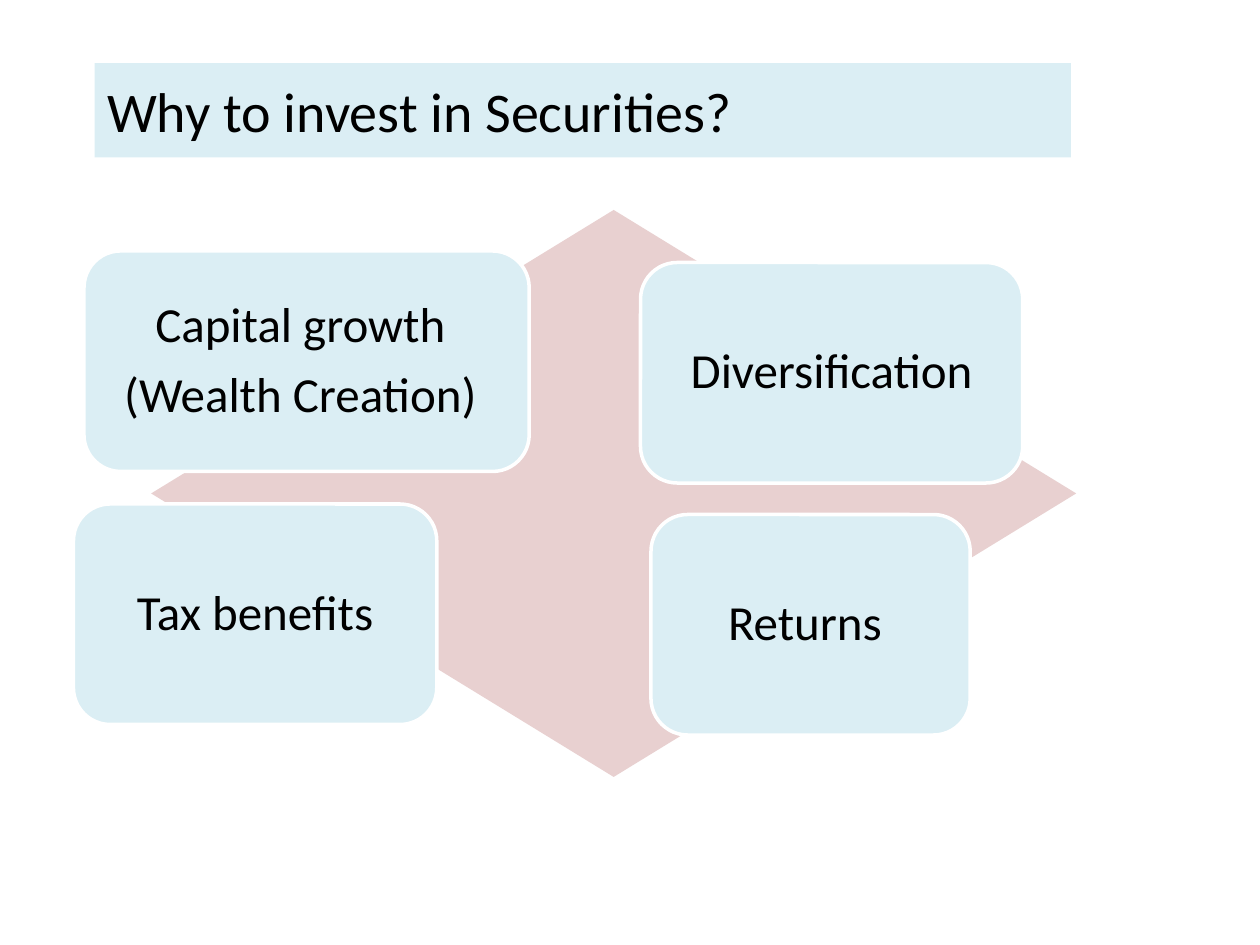
from dataclasses import dataclass

from pptx import Presentation
from pptx.dml.color import RGBColor
from pptx.enum.shapes import MSO_SHAPE as Preset
from pptx.enum.text import MSO_ANCHOR as Anchor, MSO_AUTO_SIZE as AutoSize, PP_ALIGN as Align
from pptx.util import Inches, Pt

PALE_BLUE = RGBColor(0xDB, 0xEE, 0xF4)
PALE_RED = RGBColor(0xE8, 0xD0, 0xD0)
WHITE = RGBColor(0xFF, 0xFF, 0xFF)
BLACK = RGBColor(0x00, 0x00, 0x00)
FONT = "Calibri"

# The slide is a grid of 120 columns by 90 rows
COLUMNS, ROWS = 120, 90
CELL = Inches(10) // COLUMNS
CARD_ROWS = 21
INSET = 0.12


@dataclass
class Card:
    text: str
    column: float
    row: float
    columns: float
    right_inset: float = INSET


CARDS = [
    Card("Capital growth\n(Wealth Creation)", 8, 23.9, 42.4, 0.22),
    Card("Diversification", 61, 25, 36.4),
    Card("Tax benefits", 7, 48, 34.6),
    Card("Returns", 62, 49, 30.4, 0.21),
]


def grid(*cells: float) -> list[int]:
    return [round(cell * CELL) for cell in cells]


def style_text(paragraph, size: int, align) -> None:
    paragraph.alignment = align
    for run in paragraph.runs:
        run.font.name = FONT
        run.font.size = Pt(size)
        run.font.color.rgb = BLACK


def add_filled(slide, preset, box: list[int], color: RGBColor):
    shape = slide.shapes.add_shape(preset, *box)
    shape.shadow.inherit = False
    shape.fill.solid()
    shape.fill.fore_color.rgb = color
    shape.line.fill.background()
    return shape


def add_card(slide, card: Card) -> None:
    box = grid(card.column, card.row, card.columns, CARD_ROWS)
    shape = add_filled(slide, Preset.ROUNDED_RECTANGLE, box, PALE_BLUE)
    shape.line.color.rgb = WHITE
    shape.line.width = Pt(2)
    frame = shape.text_frame
    frame.word_wrap = True
    frame.vertical_anchor = Anchor.MIDDLE
    frame.margin_left = frame.margin_top = frame.margin_bottom = Inches(INSET)
    frame.margin_right = Inches(card.right_inset)
    frame.text = card.text
    for paragraph in frame.paragraphs:
        style_text(paragraph, 28, Align.CENTER)
        paragraph.line_spacing = 0.9
    for paragraph in frame.paragraphs[:-1]:
        paragraph.space_after = Pt(9.8)


def add_title(slide, text: str) -> None:
    title = slide.shapes.title
    title.left, title.top, title.width, title.height = grid(9, 6, 93, 9)
    title.fill.solid()
    title.fill.fore_color.rgb = PALE_BLUE
    frame = title.text_frame
    frame.auto_size = AutoSize.NONE
    frame.vertical_anchor = Anchor.MIDDLE
    frame.text = text
    style_text(frame.paragraphs[0], 32, Align.LEFT)


def main() -> None:
    deck = Presentation()
    deck.slide_width, deck.slide_height = grid(COLUMNS, ROWS)
    slide = deck.slides.add_slide(deck.slide_layouts[5])

    # Title band
    add_title(slide, "Why to invest in Securities?")

    # Diamond behind the four reasons
    add_filled(slide, Preset.DIAMOND, grid(14.4, 20, 88.1, 54), PALE_RED)
    for card in CARDS:
        add_card(slide, card)

    deck.save("out.pptx")


if __name__ == "__main__":
    main()
